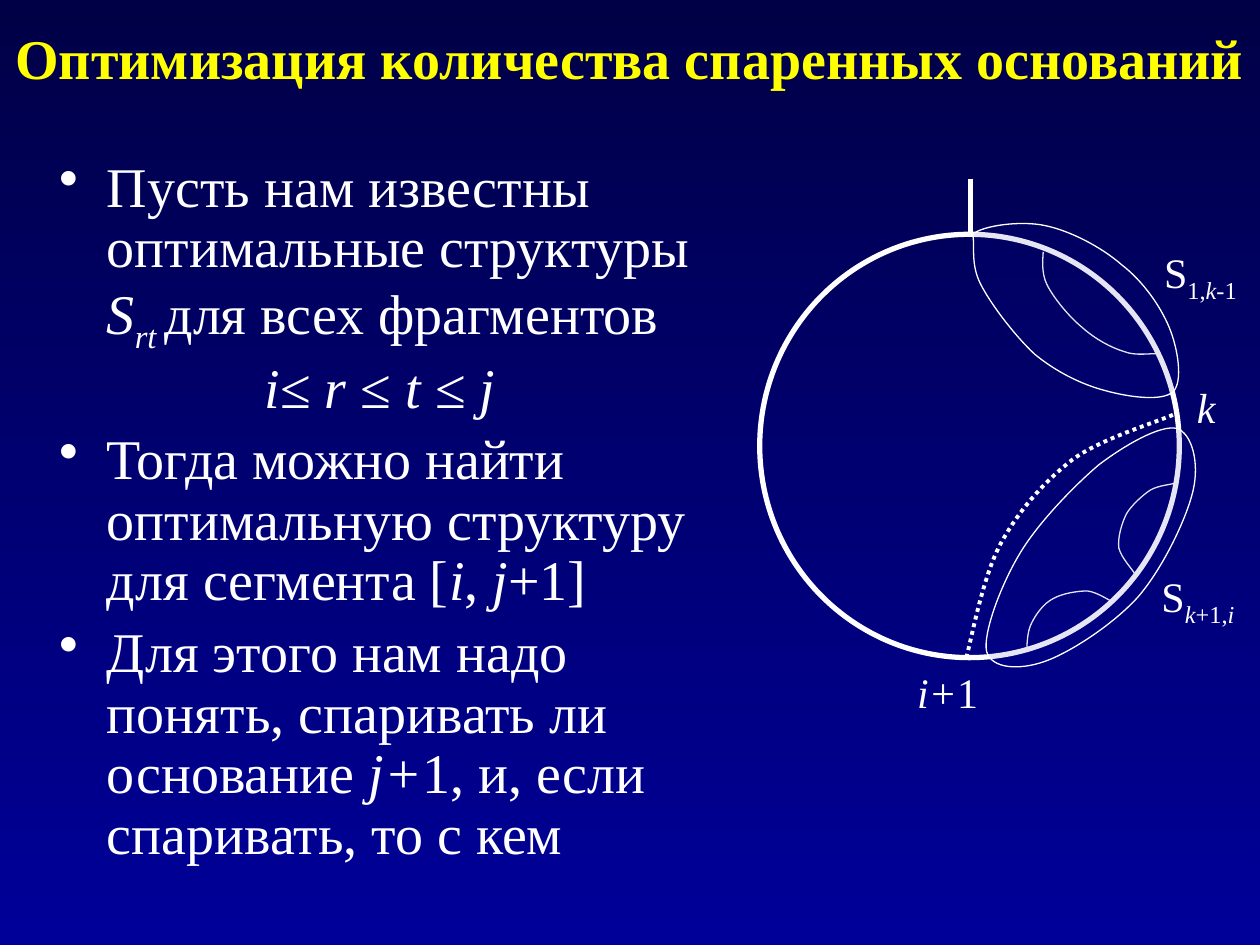
from pptx import Presentation
from pptx.dml.color import RGBColor
from pptx.enum.dml import MSO_LINE
from pptx.enum.shapes import MSO_CONNECTOR, MSO_SHAPE
from pptx.enum.text import MSO_ANCHOR, MSO_AUTO_SIZE, PP_ALIGN
from pptx.oxml.xmlchemy import OxmlElement
from pptx.util import Inches, Pt

WHITE = RGBColor(0xFF, 0xFF, 0xFF)
YELLOW = RGBColor(0xFF, 0xFF, 0x00)
NAVY = RGBColor(0x00, 0x00, 0x47)
BLUE = RGBColor(0x00, 0x00, 0x99)
FONT = "Times New Roman"
CENTER, LEFT = PP_ALIGN.CENTER, PP_ALIGN.LEFT
MIDDLE, FIT = MSO_ANCHOR.MIDDLE, MSO_AUTO_SIZE.SHAPE_TO_FIT_TEXT
DOTTED = MSO_LINE.ROUND_DOT
ELLIPSE, STRAIGHT = MSO_SHAPE.OVAL, MSO_CONNECTOR.STRAIGHT

TITLE = "Оптимизация количества спаренных оснований"
BODY = [
    (True, [("Пусть нам известны оптимальные структуры ", ""), ("S", "i"),
            ("rt ", "is"), ("для всех фрагментов", "")]),
    (False, [("i", "i"), ("≤ ", ""), ("r ", "i"), ("≤ ", ""),
             ("t ", "i"), ("≤ ", ""), ("j", "i")]),
    (True, [("Тогда можно найти оптимальную структуру для сегмента [", ""),
            ("i", "i"), (", ", ""), ("j", "i"), ("+1]", "")]),
    (True, [("Для этого нам надо понять, спаривать ли основание ", ""),
            ("j+", "i"), ("1, и, если спаривать, то с кем", "")]),
]
LABELS = [
    ((7.18, 5.24, 0.69, 0.5), [("i+", "i"), ("1", "")]),
    ((9.4, 2.98, 0.35, 0.5), [("k", "i")]),
    ((9.12, 4.48, 0.84, 0.5), [("S", ""), ("k", "is"), ("+1,", "s"), ("i", "is")]),
    ((9.14, 1.91, 0.84, 0.5), [("S", ""), ("1,", "s"), ("k", "is"), ("-1", "s")]),
]
PAIRING = [(7.67, 5.22), (7.71, 5.07), (7.8, 4.58), (7.94, 4.32), (8.08, 4.06),
           (8.28, 3.83), (8.51, 3.65), (8.74, 3.48), (9.16, 3.36), (9.34, 3.28)]
INNER_ARCS = [
    [(8.15, 5.17), (8.15, 5.13), (8.15, 5.01), (8.19, 4.94), (8.22, 4.88),
     (8.28, 4.79), (8.36, 4.75), (8.43, 4.71), (8.55, 4.69), (8.63, 4.69),
     (8.71, 4.7), (8.79, 4.76), (8.84, 4.78)],
    [(9.01, 4.56), (8.99, 4.52), (8.9, 4.43), (8.88, 4.35), (8.87, 4.27),
     (8.9, 4.16), (8.94, 4.08), (8.98, 4.01), (9.07, 3.93), (9.13, 3.89),
     (9.2, 3.85), (9.29, 3.85), (9.34, 3.83)],
    [(8.28, 2), (8.28, 2.04), (8.26, 2.16), (8.31, 2.26), (8.36, 2.36),
     (8.48, 2.51), (8.59, 2.6), (8.69, 2.69), (8.82, 2.76), (8.92, 2.79),
     (9.02, 2.83), (9.14, 2.8), (9.2, 2.81)],
]
REGIONS = [
    [(7.72, 1.86), (7.8, 1.79), (8.1, 1.75), (8.29, 1.79), (8.49, 1.83),
     (8.74, 1.96), (8.9, 2.1), (9.07, 2.23), (9.21, 2.43), (9.28, 2.6),
     (9.35, 2.77), (9.39, 3.03), (9.31, 3.11), (9.22, 3.19), (8.95, 3.15),
     (8.77, 3.1), (8.58, 3.05), (8.38, 2.95), (8.21, 2.81), (8.05, 2.66),
     (7.86, 2.41), (7.78, 2.25), (7.7, 2.09), (7.74, 1.94), (7.72, 1.86)],
    [(9.34, 3.4), (9.46, 3.44), (9.52, 3.67), (9.47, 3.89), (9.42, 4.11),
     (9.23, 4.51), (9.03, 4.74), (8.83, 4.96), (8.49, 5.18), (8.29, 5.25),
     (8.09, 5.32), (7.87, 5.31), (7.83, 5.17), (7.8, 5.03), (7.94, 4.65),
     (8.09, 4.4), (8.23, 4.16), (8.52, 3.86), (8.72, 3.69), (8.93, 3.53),
     (9.21, 3.37), (9.34, 3.4)],
]


def apply_format(target, values):
    """Set every attribute named in values on target."""
    for name, value in values.items():
        setattr(target, name, value)


def paint_background(page):
    """Fill the page with a vertical gradient."""
    fill = page.background.fill
    fill.gradient()
    fill.gradient_angle = 270
    for stop, color in zip(fill.gradient_stops, (NAVY, BLUE)):
        stop.color.rgb = color


def add_box(page, place, **frame_format):
    """Add an empty text box and return its text frame."""
    frame = page.shapes.add_textbox(*map(Inches, place)).text_frame
    apply_format(frame, frame_format)
    return frame


def add_spans(para, spans, size, color=WHITE, bold=False):
    """Write spans, where i marks italics and s marks subscript."""
    for text, style in spans:
        span = para.add_run()
        span.text = text
        apply_format(span.font, {"name": FONT, "size": Pt(size),
                                 "bold": bold, "italic": "i" in style})
        span.font.color.rgb = color
        if "s" in style:
            span.font._element.set("baseline", "-25000")


def add_body(page):
    """Add the list of statements with hanging indents."""
    frame = add_box(page, (0.37, 1.21, 5.29, 5.86), word_wrap=True)
    for index, (bulleted, spans) in enumerate(BODY):
        para = frame.add_paragraph() if index else frame.paragraphs[0]
        apply_format(para, {"alignment": LEFT if bulleted else CENTER,
                            "line_spacing": 0.9, "space_before": Pt(6.4)})
        properties = para._p.get_or_add_pPr()
        properties.set("marL", str(Inches(0.38)))
        properties.set("indent", str(Inches(-0.38)))
        bullet = OxmlElement("a:buChar" if bulleted else "a:buNone")
        if bulleted:
            bullet.set("char", "•")
        properties.append(bullet)
        add_spans(para, spans, 32)


def style_line(shape, width, dash=None):
    """Give a shape or connector a white line."""
    shape.line.color.rgb = WHITE
    apply_format(shape.line, {"width": Pt(width), "dash_style": dash})


def add_circle(page):
    """Add the sequence circle and its starting tick."""
    circle = page.shapes.add_shape(ELLIPSE, *map(Inches, (6.03, 1.86, 3.33, 3.36)))
    circle.shadow.inherit = False
    circle.fill.background()
    tick = page.shapes.add_connector(STRAIGHT, *map(Inches, (7.7, 1.42, 7.7, 1.86)))
    tick._element.spPr.append(OxmlElement("a:effectLst"))
    for shape in (circle, tick):
        style_line(shape, 3)


def add_curve(page, points, width=0.75, dash=None, closed=False):
    """Add a cubic Bezier outline, with a faint fill when closed."""
    start, *rest = [tuple(map(Inches, point)) for point in points]
    builder = page.shapes.build_freeform(*start)
    builder.add_line_segments(rest, close=closed)
    shape = builder.convert_to_shape()
    segments = shape._element.xpath(".//a:lnTo")
    for index in range(0, len(segments), 3):
        curve = OxmlElement("a:cubicBezTo")
        segments[index].addprevious(curve)
        for segment in segments[index:index + 3]:
            curve.append(segment[0])
            segment.getparent().remove(segment)
    shape.shadow.inherit = False
    if closed:
        shape.fill.solid()
        shape.fill.fore_color.rgb = BLUE
        alpha = OxmlElement("a:alpha")
        alpha.set("val", "10000")
        shape._element.xpath("./p:spPr/a:solidFill/a:srgbClr")[0].append(alpha)
    else:
        shape.fill.background()
    style_line(shape, width, dash)


def main():
    """Build the slide and save the deck."""
    deck = Presentation()
    apply_format(deck, {"slide_width": Inches(10), "slide_height": Inches(7.5)})
    page = deck.slides.add_slide(deck.slide_layouts[6])
    paint_background(page)
    title = add_box(page, (0, 0, 10, 0.9), word_wrap=True, vertical_anchor=MIDDLE)
    title.paragraphs[0].alignment = CENTER
    add_spans(title.paragraphs[0], [(TITLE, "")], 32, YELLOW, True)
    add_body(page)
    add_circle(page)
    add_curve(page, PAIRING, 2.25, DOTTED)
    for points in INNER_ARCS:
        add_curve(page, points)
    for points in REGIONS:
        add_curve(page, points, closed=True)
    for place, spans in LABELS:
        frame = add_box(page, place, word_wrap=False, auto_size=FIT)
        add_spans(frame.paragraphs[0], spans, 24)
    deck.save("out.pptx")


if __name__ == "__main__":
    main()
